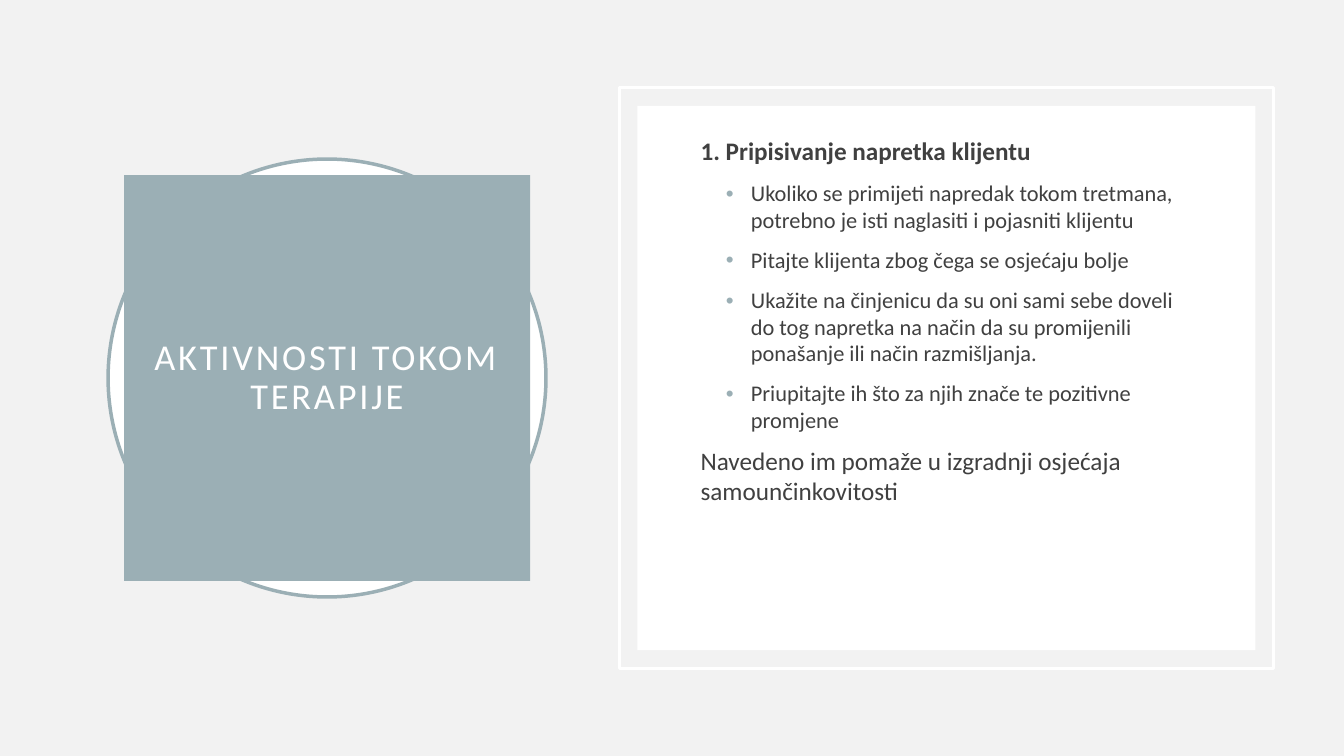
from lxml import etree
from pptx import Presentation
from pptx.dml.color import RGBColor
from pptx.enum.shapes import MSO_SHAPE
from pptx.enum.text import MSO_ANCHOR, MSO_AUTO_SIZE, PP_ALIGN
from pptx.oxml.ns import qn
from pptx.util import Pt

OVAL, RECTANGLE = MSO_SHAPE.OVAL, MSO_SHAPE.RECTANGLE
MIDDLE, TOP = MSO_ANCHOR.MIDDLE, MSO_ANCHOR.TOP
CENTER, LEFT = PP_ALIGN.CENTER, PP_ALIGN.LEFT
NO_AUTOFIT = MSO_AUTO_SIZE.NONE
FONT = "Calibri"
COLORS = {"background": "F2F2F2", "accent": "9BAFB5", "white": "FFFFFF", "text": "404040"}
TITLE = "AKTIVNOSTI TOKOM TERAPIJE"
HEADING = "1. Pripisivanje napretka klijentu"
ACTIVITIES = [
    "Ukoliko se primijeti napredak tokom tretmana, potrebno je isti naglasiti i pojasniti klijentu",
    "Pitajte klijenta zbog čega se osjećaju bolje",
    "Ukažite na činjenicu da su oni sami sebe doveli do tog napretka na način da su promijenili "
    "ponašanje ili način razmišljanja.",
    "Priupitajte ih što za njih znače te pozitivne promjene",
]
CONCLUSION = "Navedeno im pomaže u izgradnji osjećaja samounčinkovitosti"


def color(name):
    """Return the named colour."""
    return RGBColor.from_string(COLORS[name])


def paint(target, name):
    """Give a shape or background a solid fill."""
    target.fill.solid()
    target.fill.fore_color.rgb = color(name)


def place(box, left, top, width, height):
    """Set the position and size of a box in points."""
    box.left, box.top, box.width, box.height = Pt(left), Pt(top), Pt(width), Pt(height)


def add_panel(page, kind, bounds, fill=None, line=None):
    """Add a plain shape with an optional fill and outline."""
    panel = page.shapes.add_shape(kind, *map(Pt, bounds))
    panel.shadow.inherit = False
    if fill:
        paint(panel, fill)
    else:
        panel.fill.background()
    if line:
        panel.line.color.rgb = color(line)
        panel.line.width = Pt(2.5)
    else:
        panel.line.fill.background()
    return panel


def format_runs(para, size, name, bold=False):
    """Set the font of every run in a paragraph."""
    for span in para.runs:
        span.font.name, span.font.size, span.font.bold = FONT, Pt(size), bold
        span.font.color.rgb = color(name)


def set_bullet(para, bulleted):
    """Set the indent of a paragraph and its bullet, if any."""
    props = para._p.get_or_add_pPr()
    props.set("marL", str(Pt(36 if bulleted else 0)))
    props.set("indent", str(Pt(-18 if bulleted else 0)))
    if bulleted:
        tint = etree.SubElement(props, qn("a:buClr"))
        etree.SubElement(tint, qn("a:srgbClr"), val=COLORS["accent"])
        etree.SubElement(props, qn("a:buFont"), typeface="Arial")
        etree.SubElement(props, qn("a:buChar"), char="•")
    else:
        etree.SubElement(props, qn("a:buNone"))


def fill_title(title):
    """Place the title and format it as a filled square."""
    place(title, 88.6, 125, 290, 290)
    paint(title, "accent")
    frame = title.text_frame
    frame.text = TITLE
    frame.word_wrap, frame.auto_size, frame.vertical_anchor = True, NO_AUTOFIT, MIDDLE
    frame.margin_left = frame.margin_right = frame.margin_top = frame.margin_bottom = Pt(14.4)
    para = frame.paragraphs[0]
    para.alignment, para.line_spacing = CENTER, 0.9
    format_runs(para, 26, "white")
    for span in para.runs:
        span.font._element.set("spc", "200")


def fill_body(body):
    """Place the body and write the heading, activities and conclusion."""
    place(body, 493.2, 94.3, 366.5, 332)
    frame = body.text_frame
    frame.text = "\n".join([HEADING, *ACTIVITIES, CONCLUSION])
    frame.word_wrap, frame.auto_size, frame.vertical_anchor = True, NO_AUTOFIT, TOP
    for para in frame.paragraphs:
        bulleted = para.text in ACTIVITIES
        heading = para.text == HEADING
        para.level = 1 if bulleted else 0
        para.alignment, para.line_spacing = LEFT, 0.98
        para.space_before, para.space_after = Pt(0 if heading else 10), Pt(0)
        set_bullet(para, bulleted)
        format_runs(para, 16 if bulleted else 18, "text", heading)


def main():
    """Build and save the slide."""
    deck = Presentation()
    deck.slide_width, deck.slide_height = Pt(960), Pt(540)
    page = deck.slides.add_slide(deck.slide_layouts[1])
    paint(page.background, "background")
    title, body = page.shapes.title, page.placeholders[1]
    disc = add_panel(page, OVAL, (77.2, 113.6, 312.8, 312.8), "white", "accent")
    border = add_panel(page, RECTANGLE, (442.4, 62.6, 467.2, 414.8), line="white")
    card = add_panel(page, RECTANGLE, (455.3, 75.6, 441.4, 388.8), "white")
    title.element.addprevious(disc.element)
    for panel in (border, card):
        body.element.addprevious(panel.element)
    fill_title(title)
    fill_body(body)
    deck.save("out.pptx")


if __name__ == "__main__":
    main()
